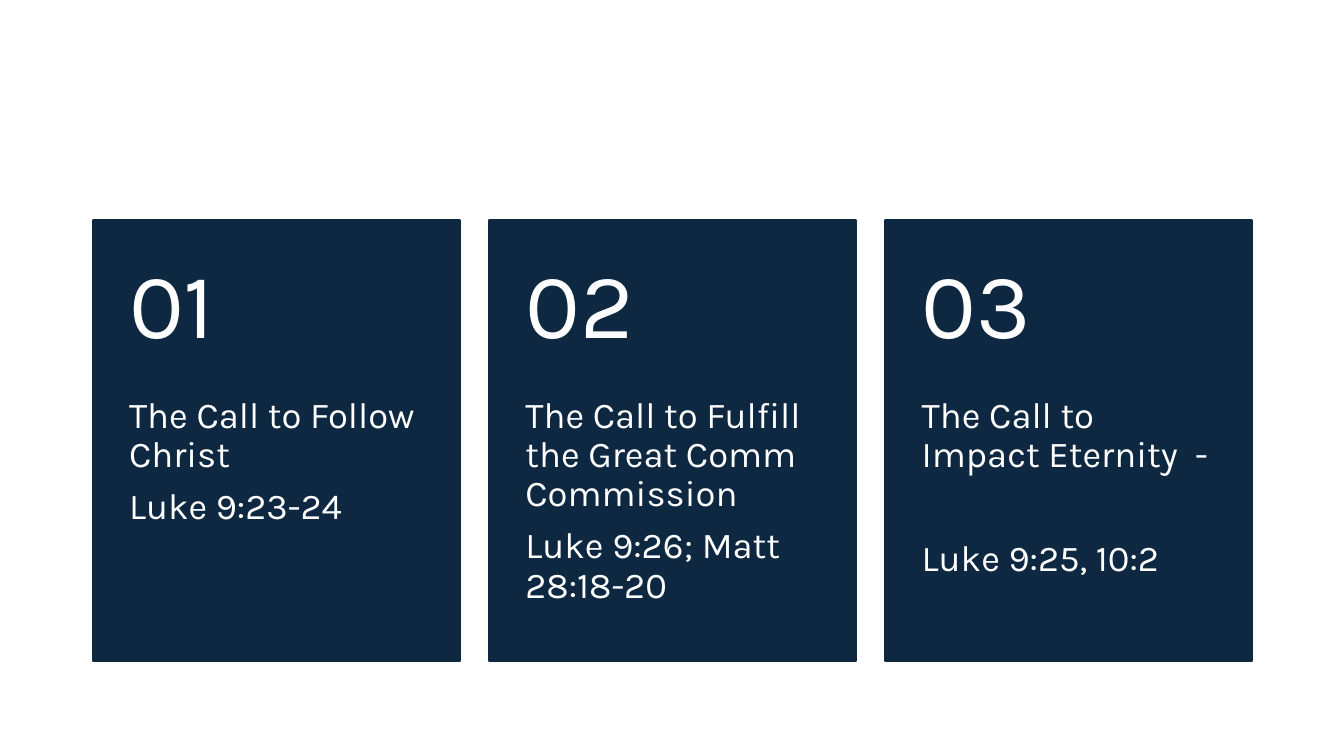
from pptx import Presentation
from pptx.dml.color import RGBColor
from pptx.enum import shapes, text
from pptx.util import Pt

NAVY = RGBColor(0x0E, 0x28, 0x41)
WHITE = RGBColor(0xFF, 0xFF, 0xFF)

# Card grid, in points
CARD_LEFT, CARD_TOP = 66.2, 157.5
CARD_WIDTH, CARD_STEP = 262.2, 283.1
NUMBER_HEIGHT, CALL_HEIGHT = 126, 188.8
SIDE_INSET, NUMBER_INSET = 26, 13

# Call, passage and the space between them
CALLS = [
    ("The Call to Follow Christ", "Luke 9:23-24", 9.1),
    ("The Call to Fulfill the Great Comm Commission",
     "Luke 9:26; Matt 28:18-20", 9.1),
    ("The Call to Impact Eternity  -", "Luke 9:25, 10:2", 46.3),
]


class CardSlide:
    font = "Karla"

    def __init__(self, presentation):
        self.slide = presentation.slides.add_slide(presentation.slide_layouts[6])

    def panel(self, left, top, width, height):
        panel = self.slide.shapes.add_shape(
            shapes.MSO_SHAPE.RECTANGLE, Pt(left), Pt(top), Pt(width), Pt(height))
        panel.shadow.inherit = False
        panel.fill.solid()
        panel.fill.fore_color.rgb = NAVY
        panel.line.color.rgb = NAVY
        panel.line.width = Pt(1.5)

    def words(self, left, top, width, height, lines, size, insets,
              anchor=text.MSO_ANCHOR.TOP, gap=0):
        frame = self.slide.shapes.add_textbox(
            Pt(left), Pt(top), Pt(width), Pt(height)).text_frame
        frame.word_wrap = True
        frame.vertical_anchor = anchor
        frame.margin_left = frame.margin_right = Pt(SIDE_INSET)
        frame.margin_top, frame.margin_bottom = map(Pt, insets)
        frame.text = "\n".join(lines)
        for paragraph in frame.paragraphs:
            paragraph.line_spacing = 0.9
            paragraph.font.name = self.font
            paragraph.font.size = Pt(size)
            paragraph.font.color.rgb = WHITE
        for paragraph in frame.paragraphs[:-1]:
            paragraph.space_after = Pt(gap)


def main():
    presentation = Presentation()
    presentation.slide_width, presentation.slide_height = Pt(960), Pt(540)
    cards = CardSlide(presentation)

    for index, (call, passage, gap) in enumerate(CALLS):
        left = CARD_LEFT + index * CARD_STEP
        # Card background
        cards.panel(left, CARD_TOP, CARD_WIDTH, NUMBER_HEIGHT + CALL_HEIGHT)
        # Call and passage
        cards.words(left, CARD_TOP + NUMBER_HEIGHT, CARD_WIDTH, CALL_HEIGHT,
                    [call, passage], 26, (0, SIDE_INSET), gap=gap)
        # Card number
        cards.words(left, CARD_TOP, CARD_WIDTH, NUMBER_HEIGHT,
                    [f"{index + 1:02}"], 66, (NUMBER_INSET, NUMBER_INSET),
                    anchor=text.MSO_ANCHOR.MIDDLE)

    presentation.save("out.pptx")


if __name__ == "__main__":
    main()
